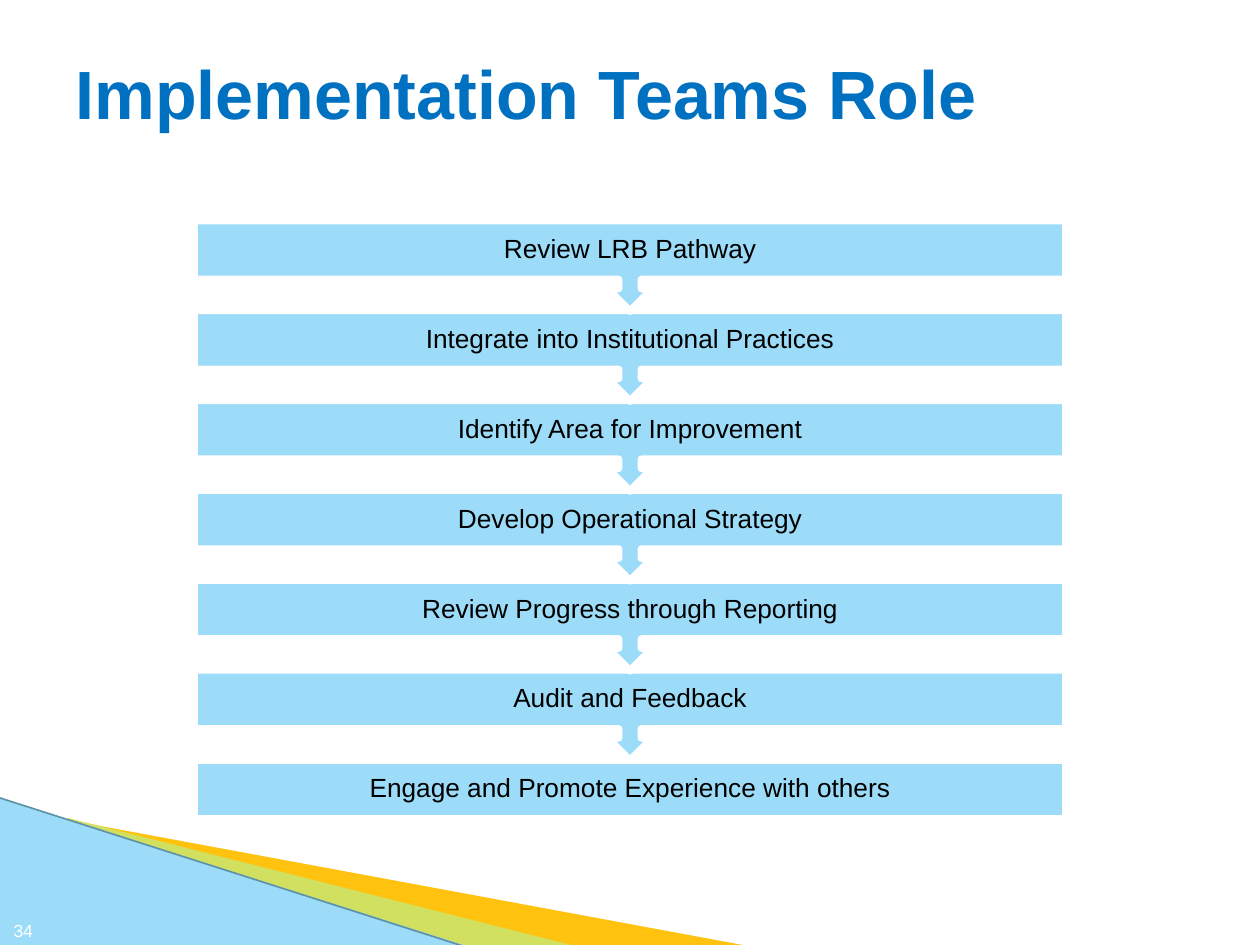
from typing import NamedTuple

from pptx import Presentation
from pptx.dml.color import RGBColor
from pptx.enum.shapes import MSO_CONNECTOR, MSO_SHAPE
from pptx.enum.text import MSO_ANCHOR, PP_ALIGN
from pptx.oxml.ns import qn
from pptx.util import Inches, Pt
from lxml.etree import SubElement

BLUE = RGBColor(0x00, 0x70, 0xC0)
SKY = RGBColor(0x9C, 0xDC, 0xF8)
EDGE = RGBColor(0x5F, 0x93, 0xA8)
GOLD = RGBColor(0xFF, 0xC2, 0x0F)
LIME = RGBColor(0xD1, 0xE0, 0x5E)
WHITE = RGBColor(0xFF, 0xFF, 0xFF)
BLACK = RGBColor(0x00, 0x00, 0x00)

LEFT, TOP, WIDTH = 1.54, 1.75, 6.92
BAR, CALL = 0.47, 0.72
LAST = 6.03

STEPS = [
    "Review LRB Pathway",
    "Integrate into Institutional Practices",
    "Identify Area for Improvement",
    "Develop Operational Strategy",
    "Review Progress through Reporting",
    "Audit and Feedback",
    "Engage and Promote Experience with others",
]


class Box(NamedTuple):
    x: float
    y: float
    w: float
    h: float

    def emu(self) -> list:
        return [Inches(v) for v in self]


class Wedge(NamedTuple):
    color: RGBColor
    points: list


WEDGES = [
    Wedge(GOLD, [(0.55, 6.51), (5.95, 7.51), (4.56, 7.51), (0.55, 6.5)]),
    Wedge(LIME, [(0.53, 6.49), (4.57, 7.51), (3.72, 7.52), (0.54, 6.5)]),
]


def paint(shape, color: RGBColor) -> None:
    shape.shadow.inherit = False
    shape.fill.solid()
    shape.fill.fore_color.rgb = color
    shape.line.fill.background()


def write(para, text: str, size: float, color: RGBColor, bold: bool = False) -> None:
    run = para.add_run()
    run.text = text
    run.font.name = "Arial"
    run.font.size = Pt(size)
    run.font.bold = bold
    run.font.color.rgb = color


def draw_wedge(slide, wedge: Wedge) -> None:
    start, *rest = [(Inches(x), Inches(y)) for x, y in wedge.points]
    path = slide.shapes.build_freeform(*start)
    path.add_line_segments(rest, close=True)
    paint(path.convert_to_shape(), wedge.color)


def draw_corner(slide) -> None:
    for wedge in WEDGES:
        draw_wedge(slide, wedge)
    box = Box(-0.01, 6.33, 3.72, 1.18)
    paint(slide.shapes.add_shape(MSO_SHAPE.RIGHT_TRIANGLE, *box.emu()), SKY)
    edge = slide.shapes.add_connector(
        MSO_CONNECTOR.STRAIGHT,
        Inches(-0.01), Inches(6.33), Inches(3.71), Inches(7.52))
    edge.line.color.rgb = EDGE
    edge.line.width = Pt(0.95)
    SubElement(edge._element.spPr, qn("a:effectLst"))


def draw_number(slide, text: str) -> None:
    frame = slide.shapes.add_textbox(*Box(-0.04, 7.12, 0.4, 0.4).emu()).text_frame
    frame.word_wrap = True
    frame.vertical_anchor = MSO_ANCHOR.BOTTOM
    para = frame.paragraphs[0]
    para.alignment = PP_ALIGN.RIGHT
    write(para, text, 10, WHITE)


def draw_step(slide, text: str, y: float, final: bool) -> None:
    kind = MSO_SHAPE.RECTANGLE if final else MSO_SHAPE.UP_ARROW_CALLOUT
    box = Box(LEFT, y, WIDTH, BAR if final else CALL)
    shape = slide.shapes.add_shape(kind, *box.emu())
    paint(shape, SKY)
    shape.line.color.rgb = WHITE
    shape.line.width = Pt(4.33)
    if not final:
        shape.rotation = 180

    # The label stays upright over the bar
    label = slide.shapes.add_textbox(*Box(LEFT, y, WIDTH, BAR).emu())
    frame = label.text_frame
    frame.word_wrap = True
    frame.vertical_anchor = MSO_ANCHOR.MIDDLE
    frame.margin_left = frame.margin_right = Inches(0.12)
    frame.margin_top = frame.margin_bottom = Inches(0.12)
    para = frame.paragraphs[0]
    para.alignment = PP_ALIGN.CENTER
    para.line_spacing = 0.9
    write(para, text, 15, BLACK)


def set_title(slide, text: str) -> None:
    title = slide.shapes.title
    title.left, title.top, title.width, title.height = Box(0.5, 0.3, 9, 1.25).emu()
    frame = title.text_frame
    frame.vertical_anchor = MSO_ANCHOR.TOP
    frame.margin_top = Inches(0.11)
    para = frame.paragraphs[0]
    para.alignment = PP_ALIGN.LEFT
    write(para, text, 39, BLUE, bold=True)


def main() -> None:
    deck = Presentation()
    deck.slide_width, deck.slide_height = Inches(10), Inches(7.5)
    slide = deck.slides.add_slide(deck.slide_layouts[5])

    # Title and corner
    set_title(slide, "Implementation Teams Role")
    draw_corner(slide)
    draw_number(slide, "34")

    # Steps, from the bottom up so each arrow lies over the next bar
    end = len(STEPS) - 1
    pitch = (LAST - TOP) / end
    for i in range(end, -1, -1):
        draw_step(slide, STEPS[i], TOP + i * pitch, i == end)

    deck.save("out.pptx")


if __name__ == "__main__":
    main()
